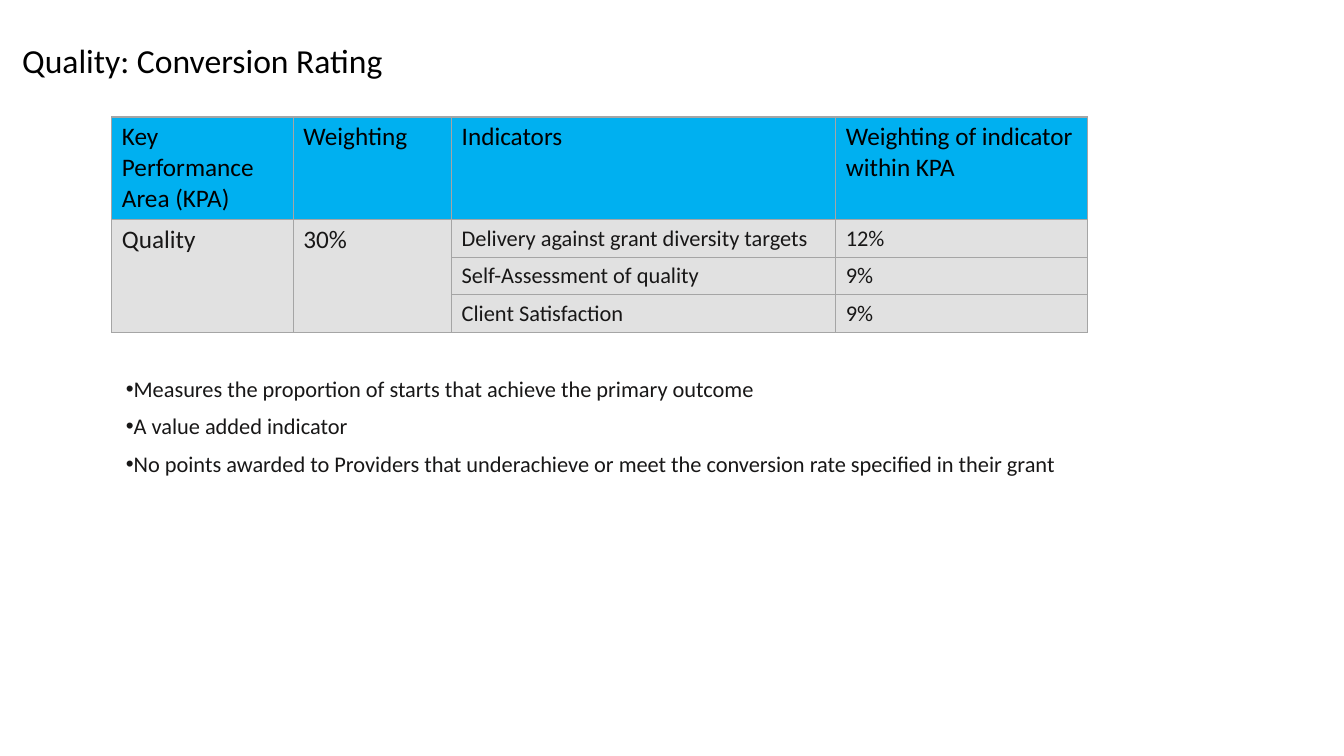
from lxml import etree
from pptx import Presentation
from pptx.dml.color import RGBColor
from pptx.enum.text import MSO_ANCHOR, PP_ALIGN
from pptx.oxml.ns import qn
from pptx.util import Inches, Pt

MIDDLE = MSO_ANCHOR.MIDDLE
LEFT = PP_ALIGN.LEFT
BLACK, DARK, BLUE, GREY, BORDER = "000000", "181717", "00B0F0", "E1E1E1", "A5A5A5"


def rgb(color):
    return RGBColor.from_string(color)


def add_text(p, text, size, color):
    r = p.add_run()
    r.text = text
    r.font.name = "Calibri"
    r.font.size = Pt(size)
    r.font.bold = False
    r.font.color.rgb = rgb(color)


prs = Presentation()
prs.slide_width, prs.slide_height = Inches(13.33), Inches(7.5)
s = prs.slides.add_slide(prs.slide_layouts[5])

# Title
title = s.shapes.title
title.left, title.top = Inches(0.12), Inches(0.31)
title.width, title.height = Inches(4.17), Inches(0.63)
tf = title.text_frame
tf.vertical_anchor = MIDDLE
p = tf.paragraphs[0]
p.alignment = LEFT
p.line_spacing = 0.9
add_text(p, "Quality: Conversion Rating", 24, BLACK)

# Table of indicators and weightings
rows = [
    ["Key Performance Area (KPA)", "Weighting", "Indicators",
     "Weighting of indicator within KPA"],
    ["Quality", "30%", "Delivery against grant diversity targets", "12%"],
    ["", "", "Self-Assessment of quality", "9%"],
    ["", "", "Client Satisfaction", "9%"],
]
col_widths = [1.8, 1.57, 3.81, 2.5]
row_heights = [1.02, 0.37, 0.37, 0.37]
table = s.shapes.add_table(
    len(rows), len(col_widths), Inches(1.11), Inches(1.16),
    Inches(sum(col_widths)), Inches(sum(row_heights))).table
for col, width in zip(table.columns, col_widths):
    col.width = Inches(width)
for row, height in zip(table.rows, row_heights):
    row.height = Inches(height)

for i, texts in enumerate(rows):
    for j, text in enumerate(texts):
        cell = table.cell(i, j)
        # Borders come before the fill in the cell properties
        tcPr = cell._tc.get_or_add_tcPr()
        for side in ("a:lnL", "a:lnR", "a:lnT", "a:lnB"):
            ln = etree.SubElement(tcPr, qn(side), w=str(Pt(1)))
            fill = etree.SubElement(ln, qn("a:solidFill"))
            etree.SubElement(fill, qn("a:srgbClr"), val=BORDER)
        cell.fill.solid()
        cell.fill.fore_color.rgb = rgb(GREY if i else BLUE)
        if text:
            size = 16 if i and j > 1 else 18
            add_text(cell.text_frame.paragraphs[0], text, size, DARK if i else BLACK)

# KPA and its weighting span the three indicators
for j in range(2):
    table.cell(1, j).merge(table.cell(3, j))

# Bullets
bullets = [
    "Measures the proportion of starts that achieve the primary outcome",
    "A value added indicator",
    "No points awarded to Providers that underachieve or meet the conversion rate "
    "specified in their grant",
]
tf = s.shapes.add_textbox(Inches(1.15), Inches(3.7), Inches(9.59), Inches(1.26)).text_frame
tf.word_wrap = True
for i, text in enumerate(bullets):
    p = tf.add_paragraph() if i else tf.paragraphs[0]
    pPr = p._p.get_or_add_pPr()
    pPr.set("marL", "0")
    pPr.set("indent", str(Inches(-0.2)))
    etree.SubElement(pPr, qn("a:buFont"), typeface="Arial")
    etree.SubElement(pPr, qn("a:buChar"), char="•")
    p.line_spacing = 0.9
    if i:
        p.space_before = Pt(9.5)
    add_text(p, text, 16, DARK)

prs.save("out.pptx")
